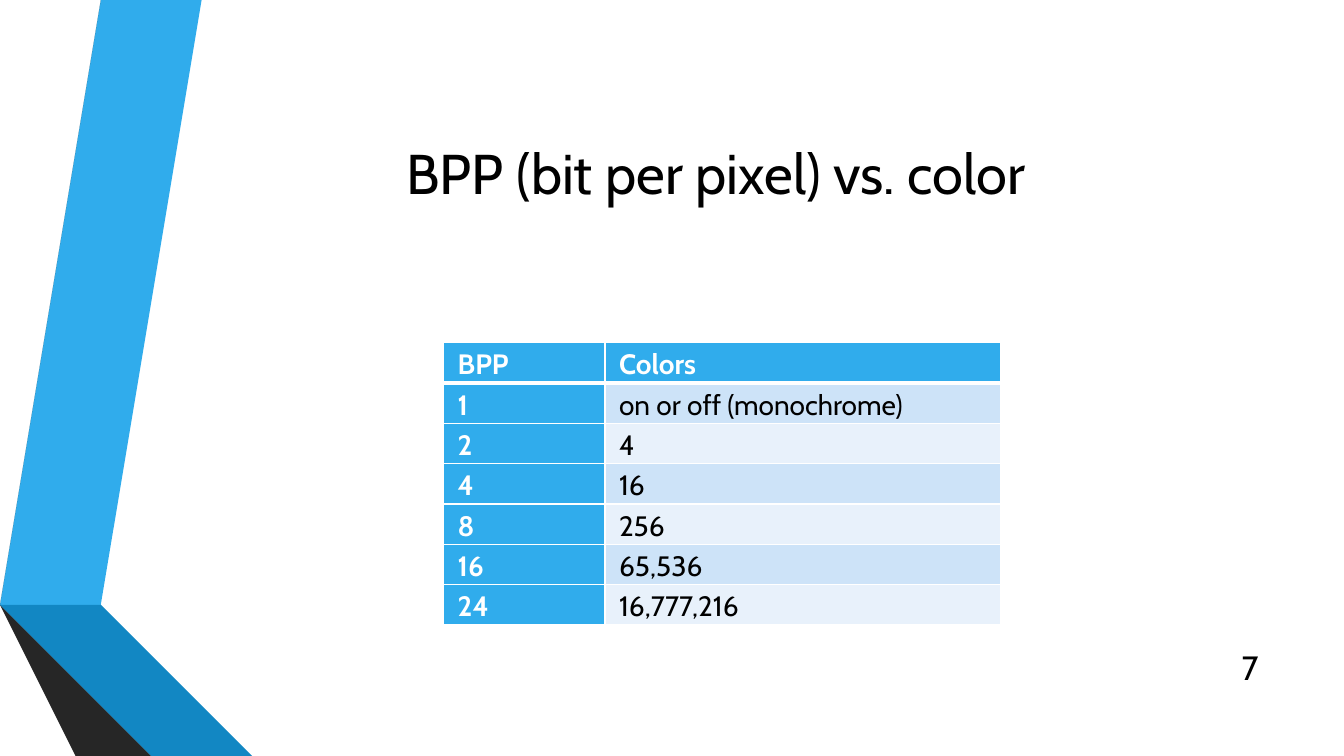
from dataclasses import dataclass

from lxml import etree
from pptx import Presentation
from pptx.dml.color import RGBColor
from pptx.enum.text import MSO_ANCHOR, PP_ALIGN
from pptx.oxml.ns import qn
from pptx.util import Inches, Pt

MIDDLE = MSO_ANCHOR.MIDDLE
LEFT, MID, RIGHT = PP_ALIGN.LEFT, PP_ALIGN.CENTER, PP_ALIGN.RIGHT
JUST = PP_ALIGN.JUSTIFY


@dataclass(frozen=True)
class Theme:
    font: str = "Cabin"
    ink: str = "000000"
    white: str = "FFFFFF"
    blue: str = "30ACEC"
    bands: tuple = ("CDE3F8", "E8F1FB")
    title: int = 40
    num: int = 24
    cell: int = 20


THEME = Theme()

# Ribbon outlines in inches from the corner of their box
RIBBONS = [
    ("30ACEC", [(0.5, 5.78), (0.77, 5.83), (1.73, 0), (1.45, 0)]),
    ("595959", [(1.39, 0), (1.11, 0), (0.16, 5.73), (0.44, 5.77)]),
    ("262626", [(0.16, 5.73), (1.45, 7.5), (1.51, 7.5)]),
    ("0C5A82", [(0.5, 5.79), (2.08, 7.5), (2.14, 7.5)]),
    ("1287C3", [(0.5, 5.79), (2.14, 7.5), (2.83, 7.5), (0.77, 5.83),
                (0.5, 5.78)]),
    ("404040", [(2.02, 7.5), (0.48, 5.83), (0.43, 5.78), (0.44, 5.77),
                (0.16, 5.73), (1.51, 7.5)]),
]

ROWS = [
    ("BPP", "Colors"),
    ("1", "on or off (monochrome)"),
    ("2", "4"),
    ("4", "16"),
    ("8", "256"),
    ("16", "65,536"),
    ("24", "16,777,216"),
]


def write(frame, text, size, color=THEME.ink, bold=False, align=LEFT,
          space=None):
    """Put one formatted paragraph into a text frame."""
    para = frame.paragraphs[0]
    para.alignment = align
    para.line_spacing = space
    run = para.add_run()
    run.text = text
    font = run.font
    font.name, font.size, font.bold = THEME.font, Pt(size), bold
    font.color.rgb = RGBColor.from_string(color)


def paint(fill, color):
    fill.solid()
    fill.fore_color.rgb = RGBColor.from_string(color)


def edge(cell, side, width):
    """Draw one white border of a cell."""
    props = cell._tc.get_or_add_tcPr()
    line = etree.SubElement(props, qn("a:ln" + side), w=str(Pt(width)))
    fill = etree.SubElement(line, qn("a:solidFill"))
    etree.SubElement(fill, qn("a:srgbClr"), val=THEME.white)


def add_art(slide, left, top):
    for color, points in RIBBONS:
        pen = slide.shapes.build_freeform(*points[0], scale=Inches(1))
        pen.add_line_segments(points[1:], close=True)
        shape = pen.convert_to_shape(Inches(left), Inches(top))
        shape.shadow.inherit = False
        paint(shape.fill, color)
        shape.line.fill.background()


def add_title(slide, text, left, top, width, height):
    title = slide.shapes.title
    title.left, title.top = Inches(left), Inches(top)
    title.width, title.height = Inches(width), Inches(height)
    frame = title.text_frame
    frame.word_wrap = True
    frame.vertical_anchor = MIDDLE
    write(frame, text, THEME.title, align=MID)


def add_num(slide, text, left, top, width, height):
    box = slide.shapes.add_textbox(
        Inches(left), Inches(top), Inches(width), Inches(height))
    frame = box.text_frame
    frame.word_wrap = True
    frame.vertical_anchor = MIDDLE
    write(frame, text, THEME.num, align=RIGHT)


def add_grid(slide, rows, left, top, widths, height):
    table = slide.shapes.add_table(
        len(rows), len(widths), Inches(left), Inches(top),
        Inches(sum(widths)), Inches(height * len(rows))).table
    table.first_col = True
    for col, width in zip(table.columns, widths):
        col.width = Inches(width)
    for r, row in enumerate(rows):
        table.rows[r].height = Inches(height)
        for c, text in enumerate(row):
            cell = table.cell(r, c)
            cell.margin_left = cell.margin_right = Inches(0.14)
            cell.margin_top = cell.margin_bottom = 0
            # The rule below the header row is thicker
            for side in "LRTB":
                thick = (r, side) in ((0, "B"), (1, "T"))
                edge(cell, side, 3 if thick else 1)
            head = r == 0 or c == 0
            paint(cell.fill, THEME.blue if head else THEME.bands[(r - 1) % 2])
            write(cell.text_frame, text, THEME.cell, bold=head, align=JUST,
                  color=THEME.white if head else THEME.ink, space=1.15)


def main():
    deck = Presentation()
    deck.slide_width, deck.slide_height = Inches(13.33), Inches(7.5)
    slide = deck.slides.add_slide(deck.slide_layouts[5])
    paint(slide.background.fill, THEME.white)
    add_art(slide, 0, 0)
    add_title(slide, "BPP (bit per pixel) vs. color", 1.62, 0.75, 10.96, 1.92)
    add_num(slide, "7", 11.98, 6.42, 0.6, 0.4)
    add_grid(slide, ROWS, 4.4, 3.4, (1.6, 3.92), 0.4)
    deck.save("out.pptx")


if __name__ == "__main__":
    main()
